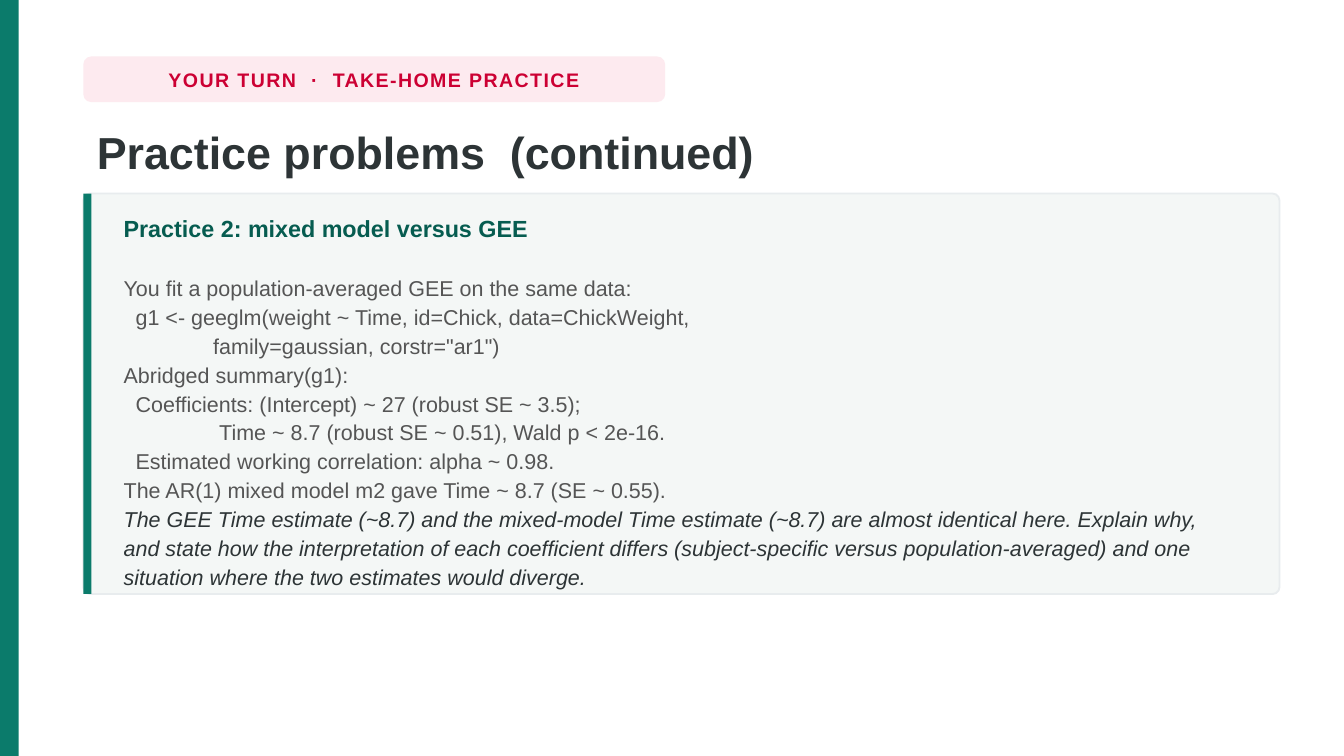
from lxml import etree
from pptx import Presentation
from pptx.dml.color import RGBColor
from pptx.enum import shapes, text
from pptx.oxml.ns import qn
from pptx.util import Pt

FONT = "Arial"
GREEN = RGBColor(0x0B, 0x7B, 0x6B)
DARK_GREEN = RGBColor(0x06, 0x5C, 0x50)
CRIMSON = RGBColor(0xCC, 0x00, 0x33)
PINK = RGBColor(0xFD, 0xEA, 0xEF)
INK = RGBColor(0x2D, 0x34, 0x36)
GREY = RGBColor(0x55, 0x55, 0x55)
CARD_FILL = RGBColor(0xF4, 0xF7, 0xF6)
CARD_LINE = RGBColor(0xE8, 0xEC, 0xEE)
WHITE = RGBColor(0xFF, 0xFF, 0xFF)

PAGE_WIDTH, PAGE_HEIGHT = 720, 405
LEFT, WIDTH = 44.64, 640.8
CARD_TOP, CARD_HEIGHT = 103.68, 214.56
SMALL_INDENT, LARGE_INDENT = 6.4, 51.2

HEADING = "Practice 2: mixed model versus GEE"
# Each line has its text and its left indent; code keeps its own spaces.
LINES = [
    ("You fit a population-averaged GEE on the same data:", 0),
    ("  g1 <- geeglm(weight ~ Time, id=Chick, data=ChickWeight,", 0),
    ('               family=gaussian, corstr="ar1")', 0),
    ("Abridged summary(g1):", 0),
    ("Coefficients: (Intercept) ~ 27 (robust SE ~ 3.5);", SMALL_INDENT),
    ("Time ~ 8.7 (robust SE ~ 0.51), Wald p < 2e-16.", LARGE_INDENT),
    ("Estimated working correlation: alpha ~ 0.98.", SMALL_INDENT),
    ("The AR(1) mixed model m2 gave Time ~ 8.7 (SE ~ 0.55).", 0),
]
QUESTION = (
    "The GEE Time estimate (~8.7) and the mixed-model Time estimate (~8.7) "
    "are almost identical here. Explain why, and state how the interpretation "
    "of each coefficient differs (subject-specific versus population-averaged) "
    "and one situation where the two estimates would diverge."
)


def add_block(page, left, top, width, height, fill, line=None, radius=None):
    """Add a filled rectangle, rounded when a radius ratio is given."""
    kind = shapes.MSO_SHAPE
    block = page.shapes.add_shape(
        kind.RECTANGLE if radius is None else kind.ROUNDED_RECTANGLE,
        Pt(left), Pt(top), Pt(width), Pt(height))
    block.shadow.inherit = False
    block.fill.solid()
    block.fill.fore_color.rgb = fill
    if line is None:
        block.line.fill.background()
    else:
        block.line.color.rgb = line
        block.line.width = Pt(1)
    if radius is not None:
        block.adjustments[0] = radius
    return block


def format_runs(para, size, colour, bold=False, italic=False):
    for span in para.runs:
        span.font.name = FONT
        span.font.size = Pt(size)
        span.font.color.rgb = colour
        span.font.bold = bold
        span.font.italic = italic


def place(holder, left, top, width, height, anchor):
    """Position a placeholder and bring it in front of the shapes."""
    holder.left, holder.top = Pt(left), Pt(top)
    holder.width, holder.height = Pt(width), Pt(height)
    frame = holder.text_frame
    frame.word_wrap = True
    frame.auto_size = text.MSO_AUTO_SIZE.NONE
    frame.vertical_anchor = anchor
    holder.element.getparent().append(holder.element)


def add_tag(page, label):
    tag = add_block(page, LEFT, 30.24, 311.76, 24.48, PINK, radius=0.176)
    frame = tag.text_frame
    frame.word_wrap = False
    frame.vertical_anchor = text.MSO_ANCHOR.MIDDLE
    frame.text = label
    para = frame.paragraphs[0]
    para.alignment = text.PP_ALIGN.CENTER
    format_runs(para, 10.5, CRIMSON, bold=True)
    para.runs[0].font._element.set("spc", "80")


def set_title(page, wording):
    title = page.shapes.title
    place(title, LEFT, 60.48, WIDTH, 40.32, text.MSO_ANCHOR.MIDDLE)
    title.text_frame.text = wording
    para = title.text_frame.paragraphs[0]
    para.alignment = text.PP_ALIGN.LEFT
    para.line_spacing = 1.02
    format_runs(para, 24, INK, bold=True)


def format_plain(para, indent=0):
    """Remove the bullet and set the indent and spacing."""
    properties = para._p.get_or_add_pPr()
    properties.set("marL", str(Pt(indent)))
    properties.set("indent", "0")
    etree.SubElement(properties, qn("a:buNone"))
    para.alignment = text.PP_ALIGN.LEFT
    para.line_spacing = 1.12
    para.space_before = Pt(0)


def fill_body(page):
    body = page.placeholders[1]
    place(body, 59.04, 109.44, 610.56, 203.04, text.MSO_ANCHOR.TOP)
    frame = body.text_frame
    frame.text = HEADING
    heading = frame.paragraphs[0]
    format_plain(heading)
    heading.space_after = Pt(16)
    format_runs(heading, 12.5, DARK_GREEN, bold=True)
    for wording, indent in LINES:
        para = frame.add_paragraph()
        para.text = wording
        format_plain(para, indent)
        format_runs(para, 11.5, GREY)
    question = frame.add_paragraph()
    question.text = QUESTION
    format_plain(question)
    format_runs(question, 11.5, INK, italic=True)


def main():
    deck = Presentation()
    deck.slide_width, deck.slide_height = Pt(PAGE_WIDTH), Pt(PAGE_HEIGHT)
    page = deck.slides.add_slide(deck.slide_layouts[1])
    page.background.fill.solid()
    page.background.fill.fore_color.rgb = WHITE
    add_block(page, 0, 0, 10.08, PAGE_HEIGHT, GREEN)
    add_tag(page, "YOUR TURN  ·  TAKE-HOME PRACTICE")
    set_title(page, "Practice problems  (continued)")
    add_block(page, LEFT, CARD_TOP, WIDTH, CARD_HEIGHT, CARD_FILL,
              line=CARD_LINE, radius=0.017)
    add_block(page, LEFT, CARD_TOP, 4.32, CARD_HEIGHT, GREEN)
    fill_body(page)
    deck.save("out.pptx")


if __name__ == "__main__":
    main()
